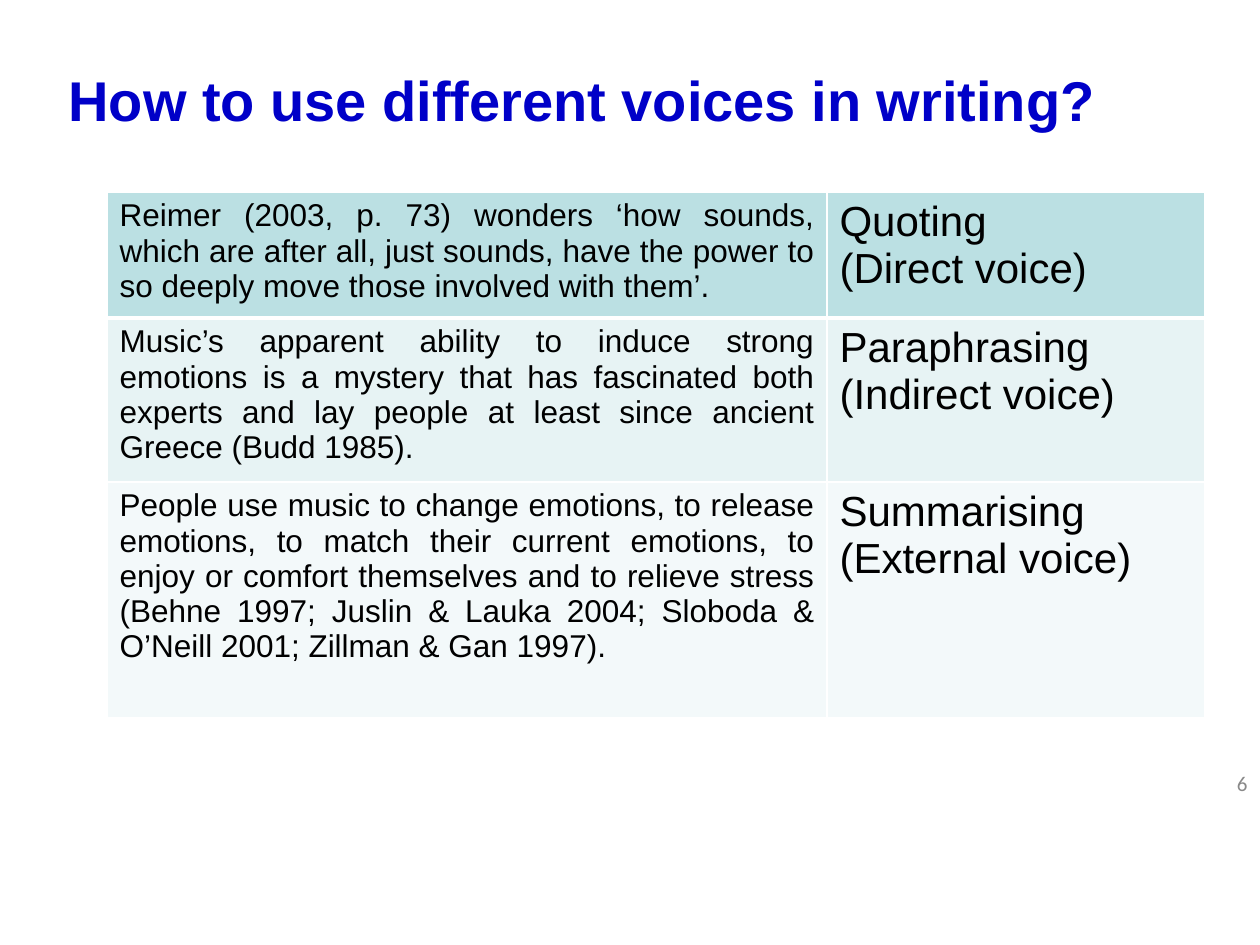
from typing import NamedTuple

from lxml import etree
from pptx import Presentation
from pptx.dml.color import RGBColor
from pptx.enum import text
from pptx.oxml import ns
from pptx.util import Pt

PX = 914400 / 126  # EMU in one px

BLUE = RGBColor(0x00, 0x00, 0xC8)
BLACK = RGBColor(0x00, 0x00, 0x00)
GREY = RGBColor(0x89, 0x89, 0x89)
WHITE = RGBColor(0xFF, 0xFF, 0xFF)
TEAL = RGBColor(0xBB, 0xE0, 0xE3)
PALE_TEAL = RGBColor(0xE7, 0xF3, 0xF4)
FAINT_TEAL = RGBColor(0xF3, 0xF9, 0xFA)


class Box(NamedTuple):
    left: int
    top: int
    width: int
    height: int


class Style(NamedTuple):
    size: int
    color: RGBColor = BLACK
    font: str = "Arial"
    bold: bool = False
    align: text.PP_ALIGN = text.PP_ALIGN.LEFT


class Voice(NamedTuple):
    example: str
    label: str
    height: int
    fill: RGBColor


TITLE = Style(32, BLUE, bold=True)
NUMBER = Style(12, GREY, font="Calibri", align=text.PP_ALIGN.RIGHT)
EXAMPLE = Style(18, align=text.PP_ALIGN.JUSTIFY)
LABEL = Style(24)

VOICES = [
    Voice("Reimer (2003, p. 73) wonders ‘how sounds, which are after all, just sounds, "
          "have the power to so deeply move those involved with them’.",
          "Quoting\n(Direct voice)", 118, TEAL),
    Voice("Music’s apparent ability to induce strong emotions is a mystery that has "
          "fascinated both experts and lay people at least since ancient Greece (Budd 1985).",
          "Paraphrasing\n(Indirect voice)", 153, PALE_TEAL),
    Voice("People use music to change emotions, to release emotions, to match their "
          "current emotions, to enjoy or comfort themselves and to relieve stress "
          "(Behne 1997; Juslin & Lauka 2004; Sloboda & O’Neill 2001; Zillman & Gan 1997).",
          "Summarising\n(External voice)", 236, FAINT_TEAL),
]
COLUMNS = [720, 378]


def px(length: int) -> int:
    return round(length * PX)


def write(frame, words: str, style: Style) -> None:
    frame.text = words
    for paragraph in frame.paragraphs:
        paragraph.alignment = style.align
        paragraph.font.size = Pt(style.size)
        paragraph.font.name = style.font
        paragraph.font.bold = style.bold
        paragraph.font.color.rgb = style.color
        # Table rows take their least height from the fonts of the runs
        for run in paragraph.runs:
            run.font.name = style.font
            run.font.size = Pt(style.size)


def add_text(slide, box: Box, words: str, style: Style):
    frame = slide.shapes.add_textbox(*map(px, box)).text_frame
    frame.word_wrap = True
    write(frame, words, style)
    return frame


def add_borders(cell, top: int, bottom: int) -> None:
    properties = cell._tc.get_or_add_tcPr()
    for side, points in (("L", 1), ("R", 1), ("T", top), ("B", bottom)):
        line = etree.SubElement(properties, ns.qn(f"a:ln{side}"), w=str(Pt(points)))
        fill = etree.SubElement(line, ns.qn("a:solidFill"))
        etree.SubElement(fill, ns.qn("a:srgbClr"), val=str(WHITE))


def add_voices(slide, left: int, top: int) -> None:
    box = Box(left, top, sum(COLUMNS), sum(voice.height for voice in VOICES))
    table = slide.shapes.add_table(len(VOICES), len(COLUMNS), *map(px, box)).table
    table.first_row = table.horz_banding = False
    for column, width in zip(table.columns, COLUMNS):
        column.width = px(width)
    for index, (row, voice) in enumerate(zip(table.rows, VOICES)):
        row.height = px(voice.height)
        contents = ((voice.example, EXAMPLE), (voice.label, LABEL))
        for cell, (words, style) in zip(row.cells, contents):
            write(cell.text_frame, words, style)
            # A thicker rule sets off the first row
            add_borders(cell, top=3 if index == 1 else 1, bottom=3 if index == 0 else 1)
            cell.fill.solid()
            cell.fill.fore_color.rgb = voice.fill


def main() -> None:
    deck = Presentation()
    deck.slide_width, deck.slide_height = px(1260), px(945)
    slide = deck.slides.add_slide(deck.slide_layouts[6])

    # Title
    title = add_text(slide, Box(56, 59, 1138, 89),
                     "How to use different voices in writing?", TITLE)
    title.margin_top = px(7)

    # Slide number
    number = add_text(slide, Box(966, 758, 294, 50), "6", NUMBER)
    number.vertical_anchor = text.MSO_ANCHOR.MIDDLE

    # Examples of each voice
    add_voices(slide, 107, 192)

    deck.save("out.pptx")


if __name__ == "__main__":
    main()
